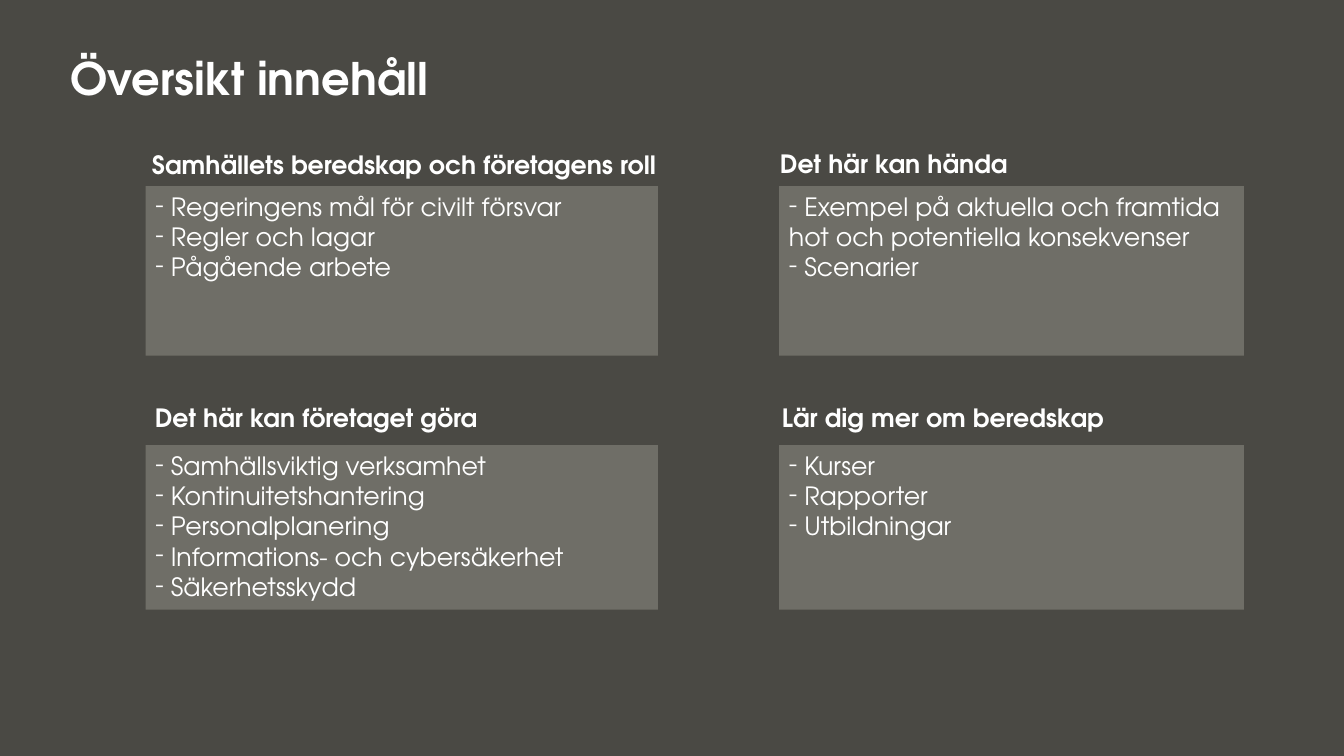
from lxml import etree
from pptx import Presentation
from pptx.dml.color import RGBColor
from pptx.enum.shapes import MSO_SHAPE
from pptx.enum.text import MSO_ANCHOR, MSO_AUTO_SIZE, PP_ALIGN
from pptx.oxml.ns import qn
from pptx.util import Pt

RECT = MSO_SHAPE.RECTANGLE
TOP, MIDDLE = MSO_ANCHOR.TOP, MSO_ANCHOR.MIDDLE
NO_FIT = MSO_AUTO_SIZE.NONE
LEFT = PP_ALIGN.LEFT

COLORS = {"background": "4A4944", "panel": "6F6E67", "text": "FFFFFF"}
COLUMNS = [(104, 366), (556.5, 332)]
ROWS = [(133, 121), (318, 117.5)]
SECTIONS = [
    ("Samhällets beredskap och företagens roll", (101.5, 103, 385, 29), 1.0,
     ["Regeringens mål för civilt försvar", "Regler och lagar",
      "Pågående arbete"]),
    ("Det här kan hända", (550, 104.5, 317, 44), 0.9,
     ["Exempel på aktuella och framtida hot och potentiella konsekvenser",
      "Scenarier"]),
    ("Det här kan företaget göra", (103.5, 286.5, 306, 47.5), 0.9,
     ["Samhällsviktig verksamhet", "Kontinuitetshantering",
      "Personalplanering", "Informations- och cybersäkerhet",
      "Säkerhetsskydd"]),
    ("Lär dig mer om beredskap", (551.5, 286.5, 343, 47.5), 0.9,
     ["Kurser", "Rapporter", "Utbildningar"]),
]


class Deck:
    font = "TeX Gyre Adventor"

    def __init__(self, prs):
        self.s = prs.slides.add_slide(prs.slide_layouts[5])
        fill = self.s.background.fill
        fill.solid()
        fill.fore_color.rgb = self.color("background")

    def color(self, name):
        return RGBColor.from_string(COLORS[name])

    def set_text(self, tf, text, size=18, bold=False, spacing=1.0, anchor=TOP):
        tf.text = text
        tf.word_wrap = True
        tf.auto_size = NO_FIT
        tf.vertical_anchor = anchor
        for p in tf.paragraphs:
            p.alignment = LEFT
            p.line_spacing = spacing
            for r in p.runs:
                r.font.name = self.font
                r.font.size = Pt(size)
                r.font.bold = bold
                r.font.color.rgb = self.color("text")

    def title(self, text, box):
        sp = self.s.shapes.title
        sp.left, sp.top, sp.width, sp.height = map(Pt, box)
        self.set_text(sp.text_frame, text, 32, True, 0.9, MIDDLE)

    def heading(self, text, box, spacing):
        sp = self.s.shapes.add_textbox(*map(Pt, box))
        self.set_text(sp.text_frame, text, bold=True, spacing=spacing)

    def panel(self, items, box):
        sp = self.s.shapes.add_shape(RECT, *map(Pt, box))
        sp.shadow.inherit = False
        sp.fill.solid()
        sp.fill.fore_color.rgb = self.color("panel")
        sp.line.fill.background()
        self.set_text(sp.text_frame, "\n".join(f" {item}" for item in items))
        for p in sp.text_frame.paragraphs:
            pPr = p._p.get_or_add_pPr()
            pPr.set("marL", "0")
            pPr.set("indent", "0")
            etree.SubElement(pPr, qn("a:buFont"), typeface=self.font)
            etree.SubElement(pPr, qn("a:buChar"), char="-")


def main():
    prs = Presentation()
    prs.slide_width, prs.slide_height = Pt(960), Pt(540)
    deck = Deck(prs)
    deck.title("Översikt innehåll", (43, 37.5, 828, 40.5))
    for i, (heading, box, spacing, items) in enumerate(SECTIONS):
        left, width = COLUMNS[i % 2]
        top, height = ROWS[i // 2]
        deck.heading(heading, box, spacing)
        deck.panel(items, (left, top, width, height))
    prs.save("out.pptx")


if __name__ == "__main__":
    main()
